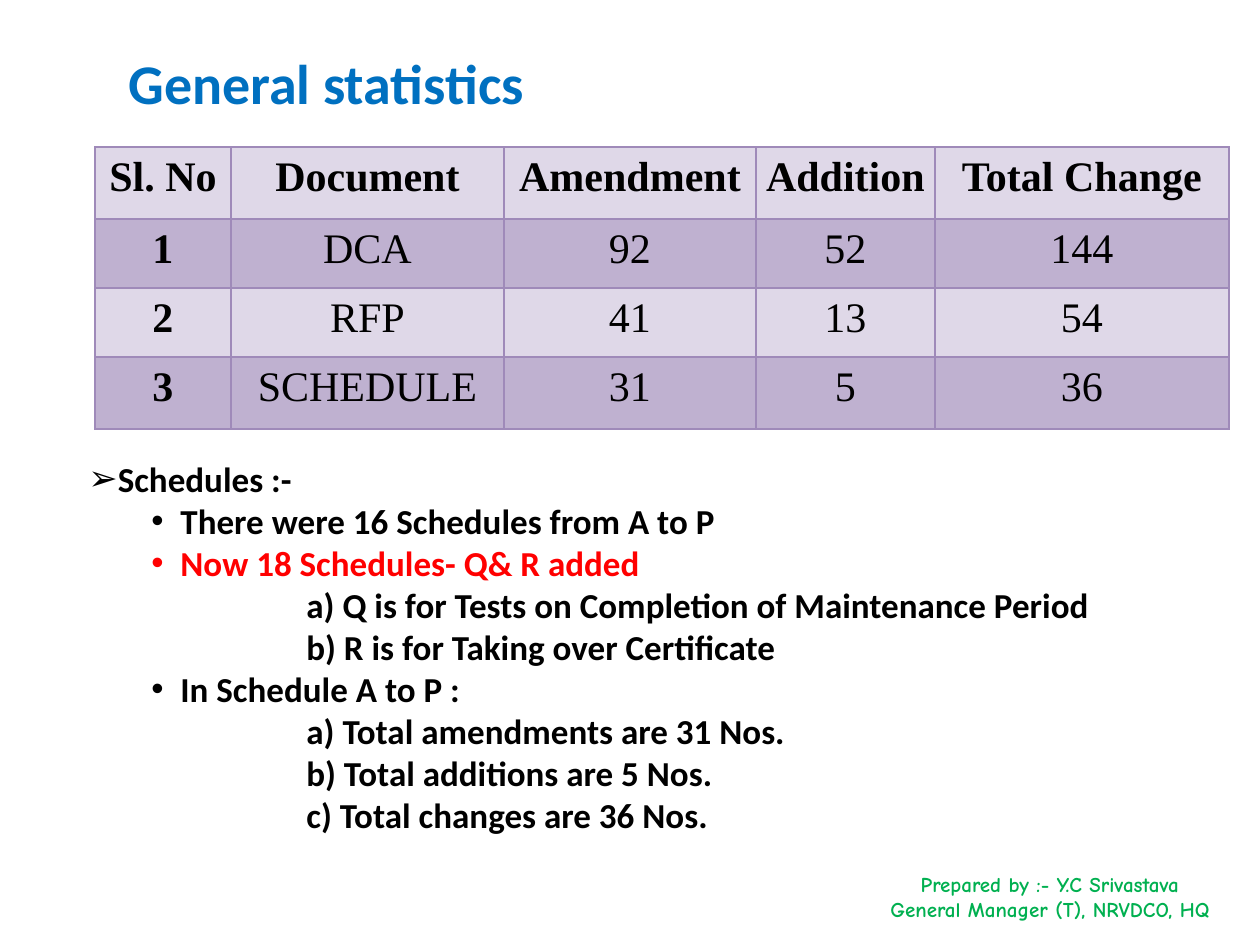
from lxml.etree import SubElement
from pptx import Presentation
from pptx.dml.color import RGBColor
from pptx.enum.text import MSO_ANCHOR, PP_ALIGN
from pptx.oxml.ns import qn
from pptx.util import Pt

PX = 914400 // 126

BLACK = RGBColor(0x00, 0x00, 0x00)
RED = RGBColor(0xFF, 0x00, 0x00)
BLUE = RGBColor(0x00, 0x70, 0xC0)
GREEN = RGBColor(0x00, 0xB0, 0x50)
LILAC = RGBColor(0xDF, 0xD8, 0xE8)
PURPLE = RGBColor(0xBF, 0xB1, 0xD0)
BORDER = RGBColor(0x9F, 0x8A, 0xB9)

presentation = Presentation()
presentation.slide_width = 1260 * PX
presentation.slide_height = 945 * PX
slide = presentation.slides.add_slide(presentation.slide_layouts[6])


def add_run(paragraph, text, font, size, color, bold=True):
    run = paragraph.add_run()
    run.text = text
    run.font.name = font
    run.font.size = Pt(size)
    run.font.bold = bold
    run.font.color.rgb = color


def add_frame(left, top, width, height):
    """Add a wrapping text box and return its text frame."""
    box = slide.shapes.add_textbox(left * PX, top * PX, width * PX, height * PX)
    box.text_frame.word_wrap = True
    return box.text_frame


# Schedule notes: marker, left margin, text, colour
BULLET_HANG = 29
notes = [
    ("➢", 63, "Schedules :-", BLACK),
    ("•", 126, "There were 16 Schedules from A to P", BLACK),
    ("•", 126, "Now 18 Schedules- Q& R added", RED),
    (None, 252, "a) Q is for Tests on Completion of Maintenance Period", BLACK),
    (None, 252, "b) R is for Taking over Certificate", BLACK),
    ("•", 126, "In Schedule A to P :", BLACK),
    (None, 252, "a) Total amendments are 31 Nos.", BLACK),
    (None, 252, "b) Total additions are 5 Nos.", BLACK),
    (None, 252, "c) Total changes are 36 Nos.", BLACK),
]
notes_frame = add_frame(42, 451, 1166, 437)
for index, (marker, margin, text, color) in enumerate(notes):
    note = notes_frame.add_paragraph() if index else notes_frame.paragraphs[0]
    properties = note._p.get_or_add_pPr()
    properties.set("marL", str(margin * PX))
    properties.set("indent", str(-BULLET_HANG * PX if marker else 0))
    if marker:
        SubElement(properties, qn("a:buFont"), typeface="Arial")
        SubElement(properties, qn("a:buChar"), char=marker)
    else:
        SubElement(properties, qn("a:buNone"))
    add_run(note, text, "Calibri", 20, color)

# Statistics table
statistics = [
    ("Sl. No", "Document", "Amendment", "Addition", "Total Change"),
    ("1", "DCA", "92", "52", "144"),
    ("2", "RFP", "41", "13", "54"),
    ("3", "SCHEDULE", "31", "5", "36"),
]
column_widths = [136, 273, 252, 179, 294]
row_heights = [72, 69, 69, 72]
table = slide.shapes.add_table(
    len(row_heights), len(column_widths), 95 * PX, 147 * PX,
    sum(column_widths) * PX, sum(row_heights) * PX,
).table
table.first_row = False
table.horz_banding = False
for column, width in zip(table.columns, column_widths):
    column.width = width * PX
for row, height in zip(table.rows, row_heights):
    row.height = height * PX

for row_index, values in enumerate(statistics):
    for column_index, value in enumerate(values):
        cell = table.cell(row_index, column_index)
        cell.margin_left = cell.margin_right = 9 * PX
        cell.margin_top = cell.margin_bottom = 0
        cell_properties = cell._tc.get_or_add_tcPr()
        for side in ("lnL", "lnR", "lnT", "lnB"):
            edge = SubElement(cell_properties, qn(f"a:{side}"), w=str(Pt(1)))
            edge_fill = SubElement(edge, qn("a:solidFill"))
            SubElement(edge_fill, qn("a:srgbClr"), val=str(BORDER))
        cell.fill.solid()
        cell.fill.fore_color.rgb = PURPLE if row_index % 2 else LILAC
        entry = cell.text_frame.paragraphs[0]
        entry.alignment = PP_ALIGN.CENTER
        entry.line_spacing = 1.15
        heading = row_index == 0 or column_index == 0
        add_run(entry, value, "Times New Roman", 24, BLACK, bold=heading)

# Title
title = add_frame(116, 42, 577, 81).paragraphs[0]
add_run(title, "General statistics", "Calibri", 32, BLUE)

# Author credit
credit_frame = add_frame(850, 872, 400, 50)
credit_frame.vertical_anchor = MSO_ANCHOR.MIDDLE
credit = credit_frame.paragraphs[0]
credit.alignment = PP_ALIGN.CENTER
add_run(credit, "Prepared by :- Y.C Srivastava", "Comic Neue", 12, GREEN)
credit.add_line_break()
add_run(credit, "General Manager (T), NRVDCO, HQ", "Comic Neue", 12, GREEN)

presentation.save("out.pptx")
